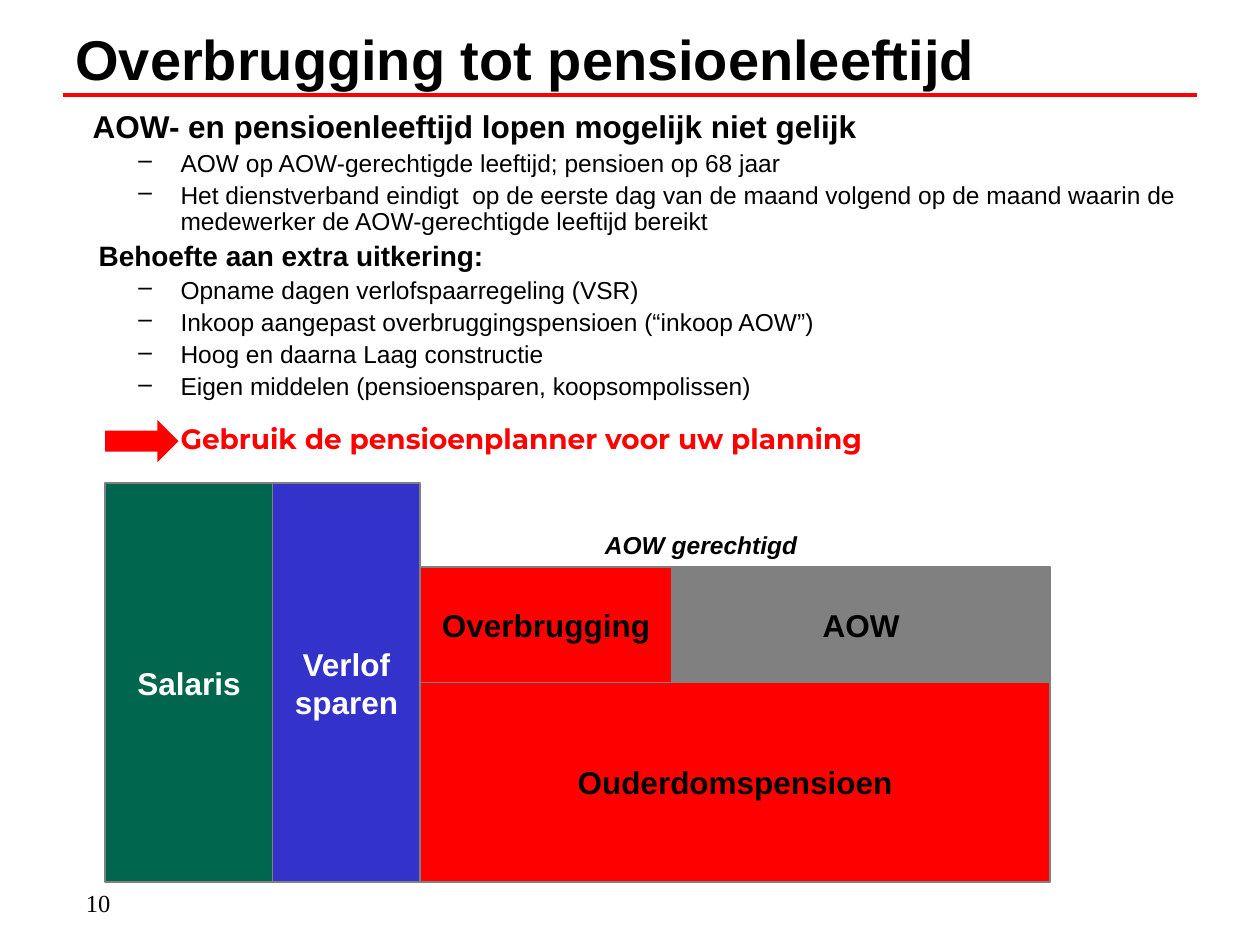
"""Build the slide on bridging the gap to pension age."""
from lxml.etree import SubElement
from pptx import Presentation
from pptx.dml.color import RGBColor
from pptx.enum.shapes import MSO_CONNECTOR, MSO_SHAPE
from pptx.enum.text import MSO_ANCHOR, PP_ALIGN
from pptx.oxml.ns import qn
from pptx.util import Cm, Pt

COLORS = {"black": "000000", "white": "FFFFFF", "red": "FF0000",
          "green": "00664D", "blue": "3333CC", "gray": "808080"}

TITLE = "Overbrugging tot pensioenleeftijd"
PAGE_NUMBER = "10"
AOW_LABEL = "AOW gerechtigd"

BODY = [
    ("heading", "AOW- en pensioenleeftijd lopen mogelijk niet gelijk"),
    ("bullet", "AOW op AOW-gerechtigde leeftijd; pensioen op 68 jaar"),
    ("bullet", "Het dienstverband eindigt  op de eerste dag van de maand volgend op de maand "
               "waarin de medewerker de AOW-gerechtigde leeftijd bereikt"),
    ("subheading", "Behoefte aan extra uitkering:"),
    ("bullet", "Opname dagen verlofspaarregeling (VSR)"),
    ("bullet", "Inkoop aangepast overbruggingspensioen (“inkoop AOW”)"),
    ("bullet", "Hoog en daarna Laag constructie"),
    ("bullet", "Eigen middelen (pensioensparen, koopsompolissen)"),
    ("advice", "Gebruik de pensioenplanner voor uw planning"),
]

# name: size, bold, colour, font, left margin (cm), space before (pt)
STYLES = {
    "heading": (18, True, "black", "Arial", 0.35, 0),
    "subheading": (16, True, "black", "Arial", 0.47, 3.7),
    "bullet": (14, False, "black", "Arial", 2.12, 3.2),
    "advice": (16, True, "red", "Montserrat", 2.12, 14),
}
HANGING = 0.85

COLUMN_EDGES = [2.12, 5.5, 8.47, 13.55, 21.17]
ROW_EDGES = [9.74, 11.43, 13.76, 17.78]
BLOCKS = [
    ("Salaris", "green", "white", (0, 1), (0, 3)),
    ("Overbrugging", "red", "black", (2, 3), (1, 2)),
    ("AOW", "gray", "black", (3, 4), (1, 2)),
    ("Ouderdomspensioen", "red", "black", (2, 4), (2, 3)),
    ("Verlof\nsparen", "blue", "white", (1, 2), (0, 3)),
]


def rgb(color):
    return RGBColor.from_string(COLORS[color])


def style_runs(paragraph, size, color="black", font="Arial", bold=True, italic=False):
    for run in paragraph.runs:
        run.font.size = Pt(size)
        run.font.name = font
        run.font.bold = bold
        run.font.italic = italic
        run.font.color.rgb = rgb(color)


def add_text(slide, box, text, size, align=PP_ALIGN.LEFT, anchor=MSO_ANCHOR.TOP, **style):
    frame = slide.shapes.add_textbox(*map(Cm, box)).text_frame
    frame.word_wrap = True
    frame.vertical_anchor = anchor
    frame.text = text
    frame.paragraphs[0].alignment = align
    style_runs(frame.paragraphs[0], size, **style)


def add_body(slide):
    frame = slide.shapes.add_textbox(Cm(1.27), Cm(2.12), Cm(23.07), Cm(7.41)).text_frame
    frame.word_wrap = True
    for index, (kind, text) in enumerate(BODY):
        size, bold, color, font, margin, before = STYLES[kind]
        paragraph = frame.add_paragraph() if index else frame.paragraphs[0]
        paragraph.text = text
        paragraph.line_spacing = 0.9
        paragraph.space_before = Pt(before)
        properties = paragraph._p.get_or_add_pPr()
        properties.set("marL", str(Cm(margin)))
        properties.set("indent", "0")
        if kind == "bullet":
            properties.set("indent", str(-Cm(HANGING)))
            SubElement(properties, qn("a:buChar"), char="–")
        style_runs(paragraph, size, color, font, bold)


def add_filled(slide, preset, box, color):
    shape = slide.shapes.add_shape(preset, *map(Cm, box))
    shape.shadow.inherit = False
    shape.fill.solid()
    shape.fill.fore_color.rgb = rgb(color)
    return shape


def add_block(slide, text, fill, color, columns, rows):
    left, right = (COLUMN_EDGES[edge] for edge in columns)
    top, bottom = (ROW_EDGES[edge] for edge in rows)
    block = add_filled(slide, MSO_SHAPE.RECTANGLE, (left, top, right - left, bottom - top), fill)
    block.line.color.rgb = rgb("gray")
    block.line.width = Pt(0.75)
    frame = block.text_frame
    frame.word_wrap = False
    frame.vertical_anchor = MSO_ANCHOR.MIDDLE
    frame.text = text
    for paragraph in frame.paragraphs:
        paragraph.alignment = PP_ALIGN.CENTER
        style_runs(paragraph, 18, color)


def main():
    deck = Presentation()
    deck.slide_width, deck.slide_height = Cm(25.4), Cm(19.05)
    slide = deck.slides.add_slide(deck.slide_layouts[6])

    rule = slide.shapes.add_connector(MSO_CONNECTOR.STRAIGHT, Cm(1.27), Cm(1.91), Cm(24.13), Cm(1.91))
    rule.line.color.rgb = rgb("red")
    rule.line.width = Pt(2)
    SubElement(rule._element.spPr, qn("a:effectLst"))

    add_text(slide, (1.48, 17.78, 5.28, 0.85), PAGE_NUMBER, 14, font="Times New Roman", bold=False)
    add_text(slide, (1.27, 0, 23.07, 2.33), TITLE, 32, anchor=MSO_ANCHOR.MIDDLE)
    add_body(slide)
    for block in BLOCKS:
        add_block(slide, *block)
    add_text(slide, (11.91, 10.57, 4.45, 0.86), AOW_LABEL, 14, align=PP_ALIGN.CENTER, italic=True)
    arrow = add_filled(slide, MSO_SHAPE.RIGHT_ARROW, (2.12, 8.47, 1.48, 0.85), "red")
    arrow.line.fill.background()

    deck.save("out.pptx")


if __name__ == "__main__":
    main()
